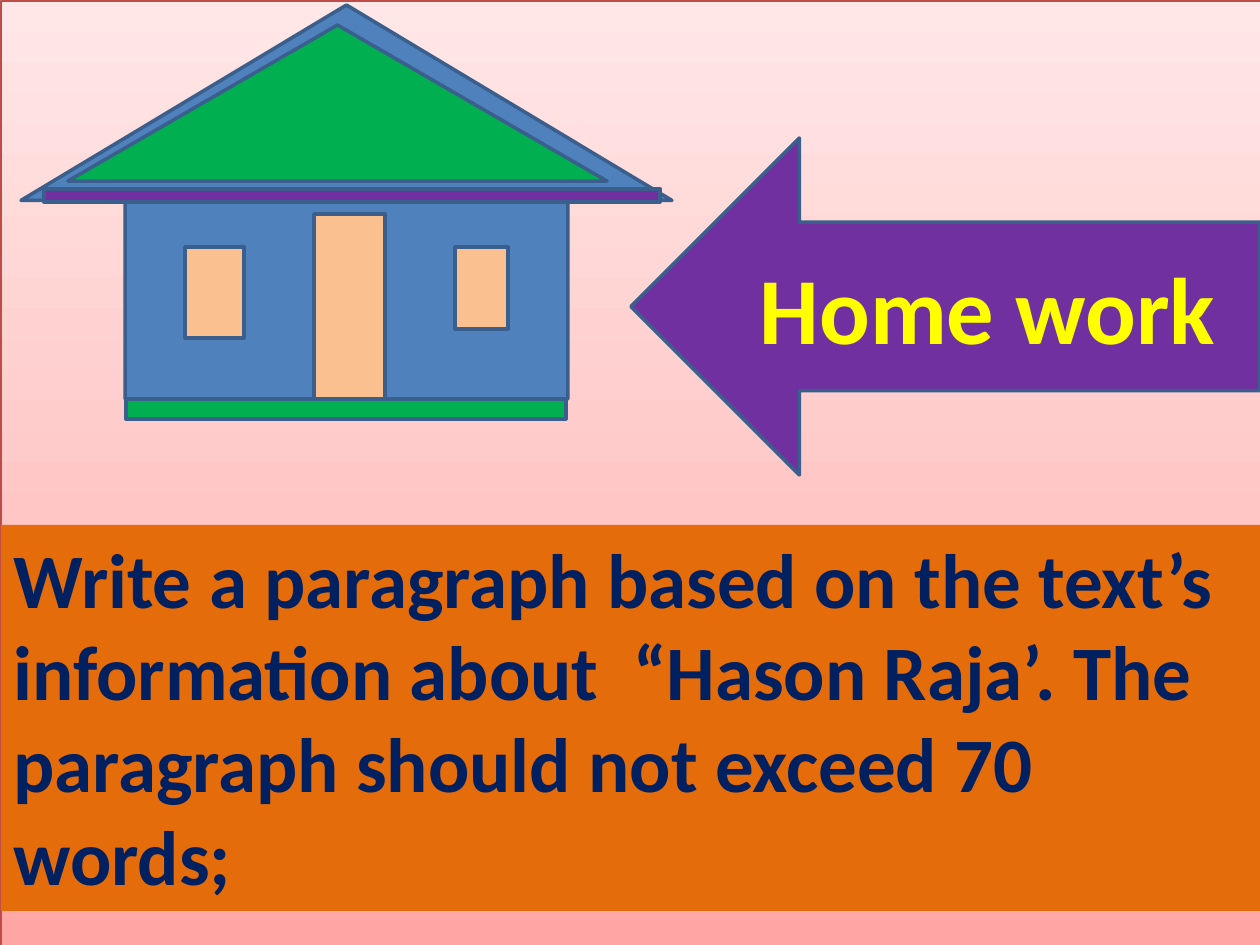
from lxml import etree
from pptx import Presentation
from pptx.dml.color import RGBColor
from pptx.enum import shapes, text
from pptx.oxml import ns
from pptx import util as u

PX = 914400 / 126
WIDE, HIGH = 1260, 945

BLUE = RGBColor(0x4F, 0x81, 0xBD)
EDGE = RGBColor(0x3A, 0x5F, 0x8C)
PEACH = RGBColor(0xFA, 0xC0, 0x90)
PURPLE = RGBColor(0x70, 0x30, 0xA0)
GREEN = RGBColor(0x00, 0xB0, 0x50)
ORANGE = RGBColor(0xE4, 0x6C, 0x0A)
NAVY = RGBColor(0x00, 0x20, 0x60)
YELLOW = RGBColor(0xFF, 0xFF, 0x00)
RED = RGBColor(0xBF, 0x4C, 0x48)
BLACK = RGBColor(0x00, 0x00, 0x00)
ROSE = [(0, RGBColor(0xFF, 0xA6, 0xA5)),
        (35, RGBColor(0xFF, 0xC0, 0xBF)),
        (100, RGBColor(0xFF, 0xE7, 0xE7))]

KIND = shapes.MSO_SHAPE


def emu(px):
    return u.Emu(round(px * PX))


def node(up, tag, **attrs):
    return etree.SubElement(up, ns.qn(tag), {k: str(v) for k, v in attrs.items()})


def write(shape, words, size=44, color=NAVY, align=text.PP_ALIGN.LEFT,
          anchor=text.MSO_ANCHOR.TOP, font="Calibri", bold=True):
    frame = shape.text_frame
    frame.word_wrap = True
    frame.vertical_anchor = anchor
    para = frame.paragraphs[0]
    para.alignment = align
    run = para.add_run()
    run.text = words
    run.font.name, run.font.size, run.font.bold = font, u.Pt(size), bold
    run.font.color.rgb = color
    return frame


class Page:
    """One slide with its shared outline style."""

    def __init__(self, deck, edge=EDGE, width=2):
        self.slide = deck.slides.add_slide(deck.slide_layouts[6])
        self.edge, self.width = edge, width

    def group(self):
        return self.slide.shapes.add_group_shape().shapes

    def shape(self, kind, box, fill, home=None, adjust=()):
        home = self.slide.shapes if home is None else home
        item = home.add_shape(kind, *map(emu, box))
        item.shadow.inherit = False
        item.fill.solid()
        item.fill.fore_color.rgb = fill
        item.line.color.rgb = self.edge
        item.line.width = u.Pt(self.width)
        for i, value in enumerate(adjust):
            item.adjustments[i] = value
        return item

    def panel(self, box, stops, edge):
        """Rectangle with a vertical gradient and a soft shadow."""
        item = self.shape(KIND.RECTANGLE, box, edge)
        item.line.color.rgb = edge
        item.line.width = u.Pt(0.75)
        item.fill.gradient()
        item.fill.gradient_angle = 90
        props = item._element.spPr
        ramp = props.find(".//" + ns.qn("a:gsLst"))
        for old in list(ramp):
            ramp.remove(old)
        for pos, color in stops:
            stop = node(ramp, "a:gs", pos=pos * 1000)
            node(stop, "a:srgbClr", val=color)
        shade = node(props.find(ns.qn("a:effectLst")), "a:outerShdw",
                     blurRad=u.Pt(3.1), dist=u.Pt(1.6), dir=90 * 60000,
                     rotWithShape=0)
        node(node(shade, "a:srgbClr", val=BLACK), "a:alpha", val=38000)
        return item


def main():
    deck = Presentation()
    deck.slide_width, deck.slide_height = emu(WIDE), emu(HIGH)
    page = Page(deck)

    # Background
    page.panel((1, 1, WIDE, HIGH), ROSE, RED)

    # House: walls and roof are one arrow, details lie on top
    house = page.group()
    page.shape(KIND.UP_ARROW, (21, 5, 651, 394), BLUE, house, (0.68, 0.496))
    door, right, left = (314, 214, 71, 185), (455, 247, 53, 82), (185, 247, 59, 91)
    beam, base = (44, 189, 616, 13), (126, 399, 440, 20)
    for box, fill in ((door, PEACH), (right, PEACH), (left, PEACH),
                      (beam, PURPLE), (base, GREEN)):
        page.shape(KIND.RECTANGLE, box, fill, house)
    page.shape(KIND.ISOSCELES_TRIANGLE, (68, 25, 539, 156), GREEN, house)

    # Title arrow
    arrow = page.shape(KIND.LEFT_ARROW, (631, 138, 629, 337), PURPLE)
    write(arrow, "Home work", size=54, color=YELLOW,
          align=text.PP_ALIGN.CENTER, anchor=text.MSO_ANCHOR.MIDDLE)

    # Task
    task = page.shape(KIND.RECTANGLE, (1, 525, 1259, 386), ORANGE)
    task.line.fill.background()
    frame = write(task, "Write a paragraph based on the text’s information about  "
                        "“Hason Raja’. The paragraph should not exceed 70 words;")
    frame.auto_size = text.MSO_AUTO_SIZE.SHAPE_TO_FIT_TEXT

    deck.save("out.pptx")


if __name__ == "__main__":
    main()
